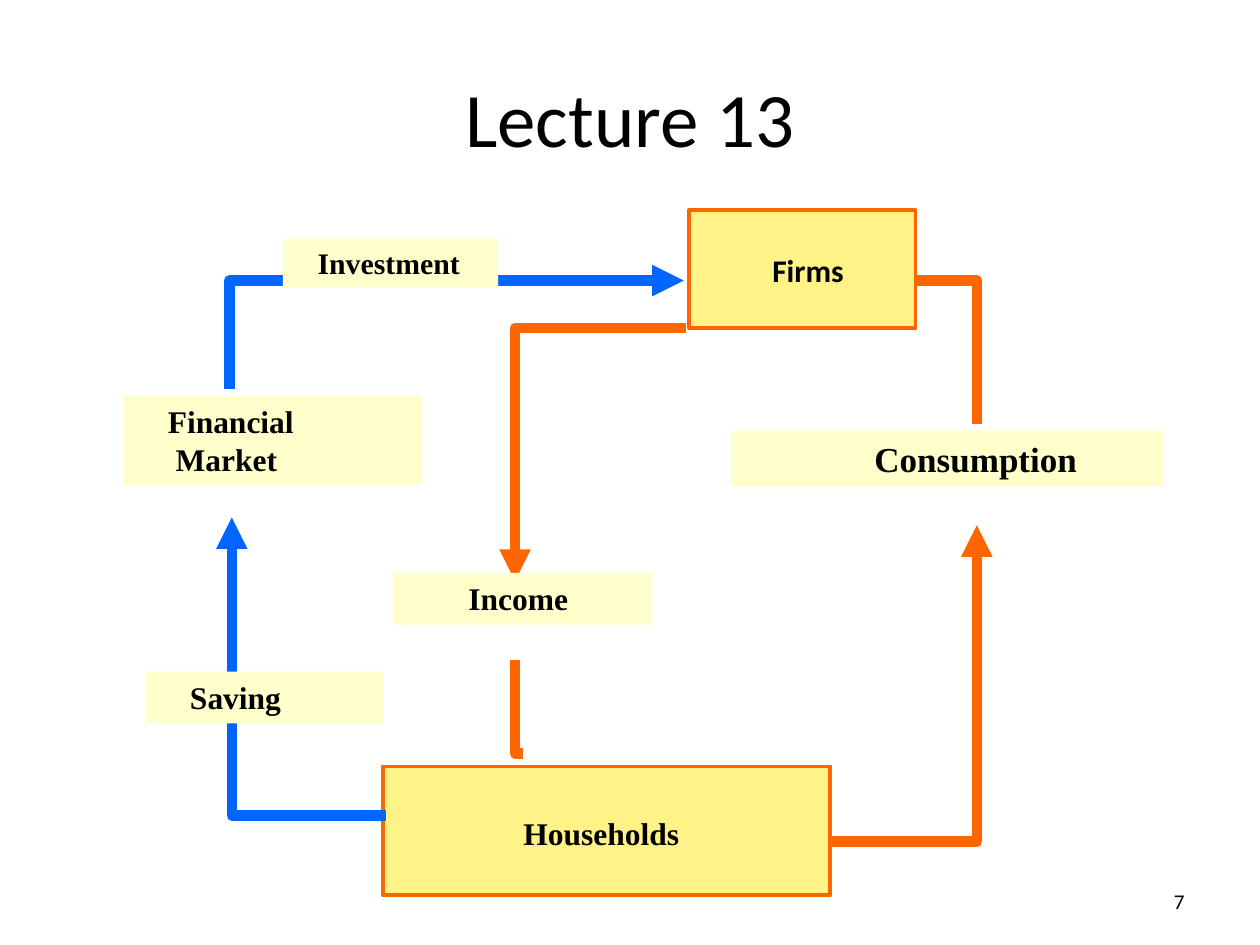
from dataclasses import dataclass

from lxml import etree
from pptx import Presentation
from pptx import util as u
from pptx.dml.color import RGBColor
from pptx.enum import shapes, text
from pptx.oxml import ns


@dataclass(frozen=True)
class Theme:
    ink: str = "000000"
    sector: str = "FFE60F"
    label: str = "FFFFCC"
    spending: str = "FF6600"
    saving: str = "0066FF"
    sans: str = "Calibri"
    serif: str = "Times New Roman"
    title: float = 44
    large: float = 20
    body: float = 18
    small: float = 17
    page: float = 12
    outline: float = 2.25
    flow: float = 6


THEME = Theme()


def rgb(color):
    return RGBColor.from_string(color)


def write(frame, lines, size=THEME.body, font=THEME.serif, bold=True,
          align=text.PP_ALIGN.LEFT, anchor=text.MSO_ANCHOR.TOP, indents=(0,)):
    """Fill a text frame, one paragraph per line, each with its left indent."""
    frame.word_wrap = True
    frame.vertical_anchor = anchor
    for number, (line, indent) in enumerate(zip(lines.split("\n"), indents)):
        paragraph = frame.add_paragraph() if number else frame.paragraphs[0]
        paragraph.alignment = align
        if indent:
            properties = paragraph._p.get_or_add_pPr()
            properties.set("marL", str(u.Pt(indent)))
            properties.set("indent", "0")
        run = paragraph.add_run()
        run.text = line
        run.font.size = u.Pt(size)
        run.font.name = font
        run.font.bold = bold
        run.font.color.rgb = rgb(THEME.ink)


class FlowSlide:
    def __init__(self, slide, theme):
        self.slide, self.theme = slide, theme

    def title(self, words, *box):
        heading = self.slide.shapes.title
        heading.left, heading.top, heading.width, heading.height = map(u.Pt, box)
        write(heading.text_frame, words, size=self.theme.title, font=self.theme.sans,
              bold=False, align=text.PP_ALIGN.CENTER, anchor=text.MSO_ANCHOR.MIDDLE)

    def caption(self, words, *box, **style):
        area = self.slide.shapes.add_textbox(*map(u.Pt, box))
        write(area.text_frame, words, **style)

    def rectangle(self, box, fill):
        panel = self.slide.shapes.add_shape(shapes.MSO_SHAPE.RECTANGLE, *map(u.Pt, box))
        panel.shadow.inherit = False
        panel.fill.solid()
        panel.fill.fore_color.rgb = rgb(fill)
        return panel

    def sector(self, *box):
        panel = self.rectangle(box, self.theme.sector)
        tint = panel._element.spPr.find(ns.qn("a:solidFill")).find(ns.qn("a:srgbClr"))
        etree.SubElement(tint, ns.qn("a:alpha"), val="50000")
        panel.line.color.rgb = rgb(self.theme.spending)
        panel.line.width = u.Pt(self.theme.outline)

    def label(self, words, *box, **style):
        panel = self.rectangle(box, self.theme.label)
        panel.line.fill.background()
        write(panel.text_frame, words, **style)

    def flow(self, color, *points, arrow=False):
        start, *bends = [(u.Pt(x), u.Pt(y)) for x, y in points]
        builder = self.slide.shapes.build_freeform(*start)
        builder.add_line_segments(bends, close=False)
        route = builder.convert_to_shape()
        route.shadow.inherit = False
        route.fill.background()
        route.line.color.rgb = rgb(color)
        route.line.width = u.Pt(self.theme.flow)
        stroke = route.line._get_or_add_ln()
        etree.SubElement(stroke, ns.qn("a:round"))
        if arrow:
            etree.SubElement(stroke, ns.qn("a:tailEnd"), type="triangle")


def main():
    deck = Presentation()
    deck.slide_width, deck.slide_height = u.Pt(720), u.Pt(540)
    page = FlowSlide(deck.slides.add_slide(deck.slide_layouts[5]), THEME)
    spending, saving = THEME.spending, THEME.saving

    # Heading and page number
    page.title("Lecture 13", 36, 21.6, 648, 90)
    page.caption("7", 516, 500.5, 168, 28.75, size=THEME.page, font=THEME.sans,
                 bold=False, align=text.PP_ALIGN.RIGHT, anchor=text.MSO_ANCHOR.MIDDLE)

    # The two sectors
    page.sector(218.8, 438, 255.6, 73.5)
    page.sector(393.8, 120, 129.4, 67.6)
    page.caption("Households", 247, 461.5, 211.7, 29.5, indents=[45])

    # Income: firms to households
    income_x = 294.3
    page.flow(spending, (income_x, 377), (income_x, 430.6), (298.8, 430.6))
    page.label("Consumption", 417.6, 246.2, 247, 31.7, size=THEME.large, indents=[75])
    page.flow(spending, (392, 187.4), (income_x, 187.4), (income_x, 332), arrow=True)

    # Consumption: households to firms
    consumption_x = 558.2
    page.flow(spending, (523.3, 160.3), (consumption_x, 160.3), (consumption_x, 242.2))
    page.label("Income", 224.6, 327.4, 148.3, 29.5, indents=[36])
    page.flow(spending, (475.7, 480.8), (consumption_x, 480.8), (consumption_x, 300.2),
              arrow=True)

    # Saving and investment through the financial market
    page.flow(saving, (131.2, 222.3), (131.2, 160.3), (390.7, 160.3), arrow=True)
    page.flow(saving, (220.5, 466), (132.5, 466), (132.5, 295.7), arrow=True)
    page.label("Financial\nMarket", 70.8, 226.2, 170, 50.9, indents=[18, 22.5])
    page.label("Saving", 83.5, 383.8, 135.5, 29.5, indents=[18])
    page.label("Investment", 161.6, 136.4, 123.1, 28, size=THEME.small, indents=[12.75])
    page.caption("Firms", 414, 139.7, 88.6, 29, font=THEME.sans, indents=[20.25])

    deck.save("out.pptx")


if __name__ == "__main__":
    main()
